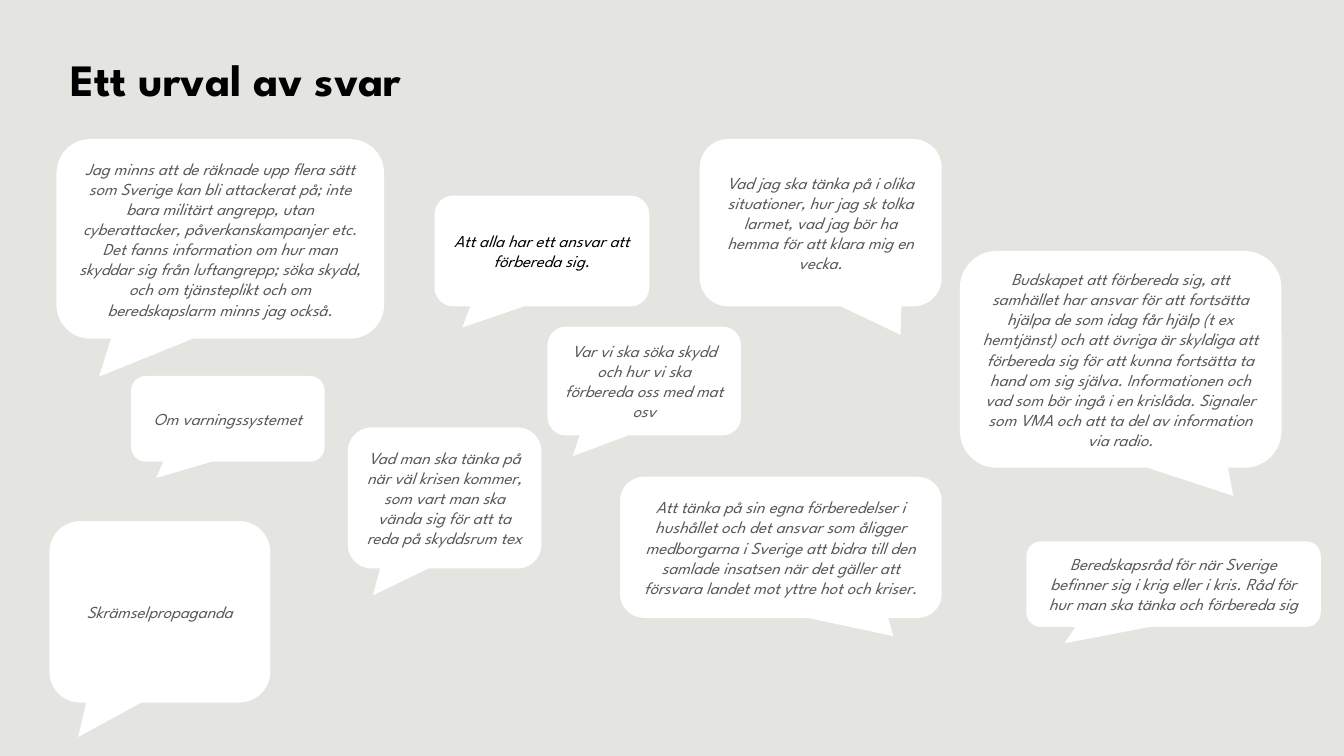
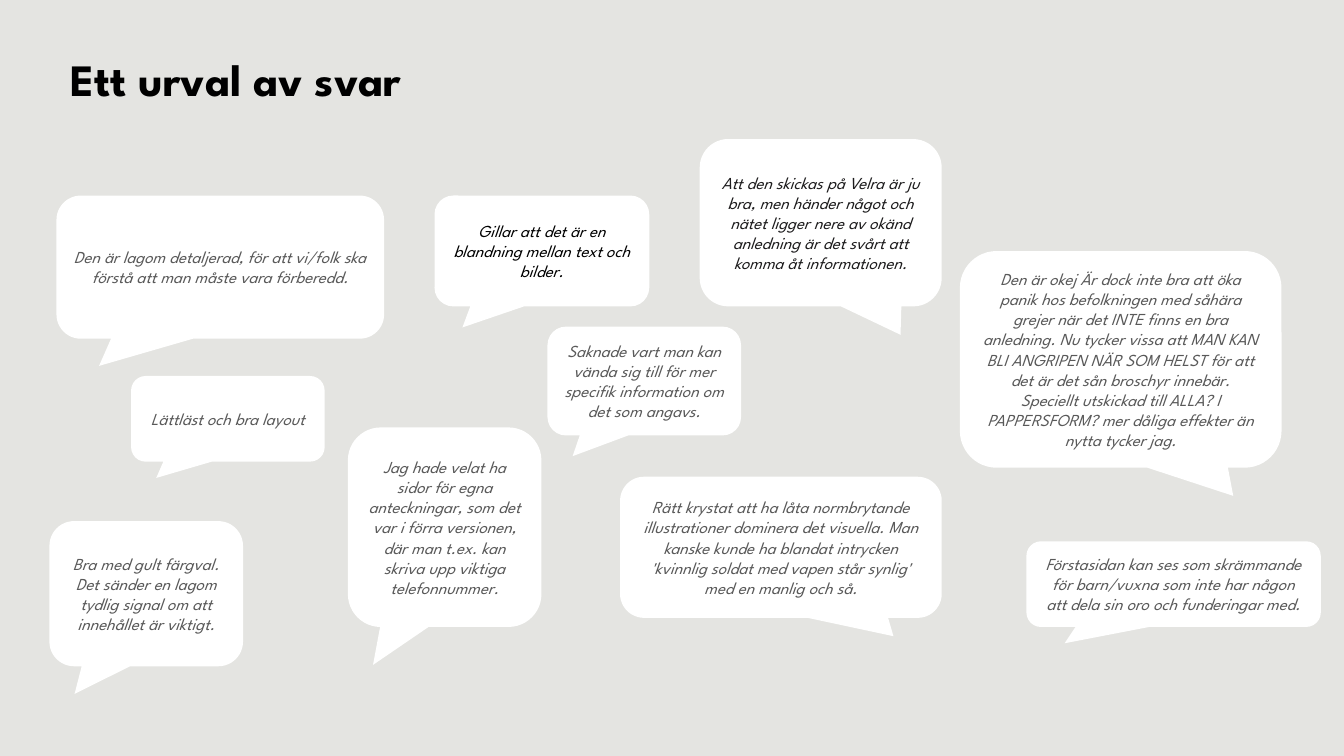
from pptx import Presentation
from pptx import util as u
from pptx.dml.color import RGBColor
from pptx.enum import shapes, text

EMU_PER_PX = 9144  # 100 px to the inch
FONT = "League Spartan"
BACKGROUND = RGBColor(0xE4, 0xE4, 0xE1)
WHITE = RGBColor(0xFF, 0xFF, 0xFF)
BLACK = RGBColor(0, 0, 0)
INK = RGBColor(0x1D, 0x1C, 0x1D)
GREY = RGBColor(0x59, 0x59, 0x59)

TITLE = "Ett urval av svar"
TITLE_BOX = (60, 52, 1150, 56)

# Callout tails: tip offset from the centre as a share of the size, corner radius
TAIL_LEFT = (-0.37, 0.69, 0.17)
TAIL_RIGHT = (0.35, 0.63, 0.17)
TAIL_RIGHT_LONG = (0.33, 0.67, 0.17)

# Bubble places: left, top, width, height in px, and tail
PLACES = {
    "left": (130, 373, 192, 85, TAIL_LEFT),
    "top middle": (431, 194, 213, 110, TAIL_LEFT),
    "centre": (543, 324, 192, 108, TAIL_LEFT),
    "lower middle": (345, 424, 192, 140, TAIL_LEFT),
    "lower right": (615, 473, 319, 140, TAIL_RIGHT),
    "top right": (694, 138, 240, 166, TAIL_RIGHT_LONG),
    "bottom left": (49, 517, 192, 144, TAIL_LEFT),
    "right": (952, 249, 319, 215, TAIL_RIGHT),
    "bottom right": (1018, 537, 292, 85, TAIL_LEFT),
    "top left": (56, 194, 325, 142, TAIL_LEFT),
}

# Answers on each slide, by place
ANSWERS = [
    {
        "left": "Om varningssystemet",
        "top middle": "Att alla har ett ansvar att förbereda sig.",
        "centre": "Var vi ska söka skydd och hur vi ska förbereda oss med mat osv",
        "lower middle": "Vad man ska tänka på när väl krisen kommer, som vart man ska "
                        "vända sig för att ta reda på skyddsrum tex",
        "lower right": "Att tänka på sin egna förberedelser i hushållet och det ansvar som "
                       "åligger medborgarna i Sverige att bidra till den samlade insatsen "
                       "när det gäller att försvara landet mot yttre hot och kriser.",
        "top right": "Vad jag ska tänka på i olika situationer, hur jag sk tolka larmet, "
                     "vad jag bör ha hemma för att klara mig en vecka.",
        "bottom left": "Skrämselpropaganda",
        "right": "Budskapet att förbereda sig, att samhället har ansvar för att fortsätta "
                 "hjälpa de som idag får hjälp (t ex hemtjänst) och att övriga är skyldiga "
                 "att förbereda sig för att kunna fortsätta ta hand om sig själva. "
                 "Informationen och vad som bör ingå i en krislåda. Signaler som VMA och "
                 "att ta del av information via radio.",
        "bottom right": "Beredskapsråd för när Sverige befinner sig i krig eller i kris. "
                        "Råd för hur man ska tänka och förbereda sig",
        "top left": "Jag minns att de räknade upp flera sätt som Sverige kan bli attackerat "
                    "på; inte bara militärt angrepp, utan cyberattacker, "
                    "påverkanskampanjer etc. Det fanns information om hur man skyddar sig "
                    "från luftangrepp; söka skydd, och om tjänsteplikt och om "
                    "beredskapslarm minns jag också.",
    },
    {
        "left": "Lättläst och bra layout",
        "top middle": "Gillar att det är en blandning mellan text och bilder.",
        "centre": "Saknade vart man kan vända sig till för mer specifik information om "
                  "det som angavs.",
        "lower middle": "Jag hade velat ha sidor för egna anteckningar, som det var i förra "
                        "versionen, där man t.ex. kan skriva upp viktiga telefonnummer.",
        "lower right": "Rätt krystat att ha låta normbrytande illustrationer dominera det "
                       "visuella. Man kanske kunde ha blandat intrycken 'kvinnlig soldat "
                       "med vapen står synlig' med en manlig och så.",
        "top right": "Att den skickas på Velra är ju bra, men händer något och nätet ligger "
                     "nere av okänd anledning är det svårt att komma åt informationen.",
        "bottom left": "Bra med gult färgval. Det sänder en lagom tydlig signal om att "
                       "innehållet är viktigt.",
        "right": "Den är okej Är dock inte bra att öka panik hos befolkningen med såhära "
                 "grejer när det INTE finns en bra anledning. Nu tycker vissa att MAN KAN "
                 "BLI ANGRIPEN NÄR SOM HELST för att det är det sån broschyr innebär. "
                 "Speciellt utskickad till ALLA? I PAPPERSFORM? mer dåliga effekter än "
                 "nytta tycker jag.",
        "bottom right": "Förstasidan kan ses som skrämmande för barn/vuxna som inte har "
                        "någon att dela sin oro och funderingar med.",
        "top left": "Den är lagom detaljerad, för att vi/folk ska förstå att man måste vara "
                    "förberedd.",
    },
]

# Bubbles that differ in size or colour, by slide
RESIZED = [
    {"top left": (56, 138, 325, 198), "bottom left": (49, 517, 219, 180)},
    {"lower middle": (345, 424, 192, 198)},
]
COLOURS = [{"top middle": BLACK}, {"top middle": BLACK, "top right": INK}]


def px(n):
    return u.Emu(n * EMU_PER_PX)


def put_text(sp, words, size=12, color=GREY, bold=False, italic=False,
             align=text.PP_ALIGN.LEFT, anchor=text.MSO_ANCHOR.TOP, spacing=1.0):
    tf = sp.text_frame
    tf.word_wrap = True
    tf.auto_size = text.MSO_AUTO_SIZE.NONE
    tf.vertical_anchor = anchor
    p = tf.paragraphs[0]
    p.alignment, p.line_spacing = align, spacing
    r = p.add_run()
    r.text = words
    f = r.font
    f.name, f.size, f.bold, f.italic = FONT, u.Pt(size), bold, italic
    f.color.rgb = color


def add_bubble(s, box, tail, words, color):
    sp = s.shapes.add_shape(shapes.MSO_SHAPE.ROUNDED_RECTANGULAR_CALLOUT, *map(px, box))
    for i, value in enumerate(tail):
        sp.adjustments[i] = value
    sp.shadow.inherit = False
    sp.fill.solid()
    sp.fill.fore_color.rgb = WHITE
    sp.line.fill.background()
    put_text(sp, words, color=color, italic=True,
             align=text.PP_ALIGN.CENTER, anchor=text.MSO_ANCHOR.MIDDLE)


def main():
    prs = Presentation()
    prs.slide_width, prs.slide_height = u.Inches(13.33), u.Inches(7.5)

    # Shared background and title place
    fill = prs.slide_master.background.fill
    fill.solid()
    fill.fore_color.rgb = BACKGROUND
    layout = prs.slide_layouts[5]
    title = layout.placeholders[0]
    title.left, title.top, title.width, title.height = map(px, TITLE_BOX)

    # One slide of bubbles per set of answers
    for answers, resized, colours in zip(ANSWERS, RESIZED, COLOURS):
        s = prs.slides.add_slide(layout)
        put_text(s.shapes.title, TITLE, size=32, color=BLACK, bold=True, spacing=0.9)
        for place, words in answers.items():
            *box, tail = PLACES[place]
            add_bubble(s, resized.get(place, box), tail, words, colours.get(place, GREY))

    prs.save("out.pptx")


if __name__ == "__main__":
    main()
